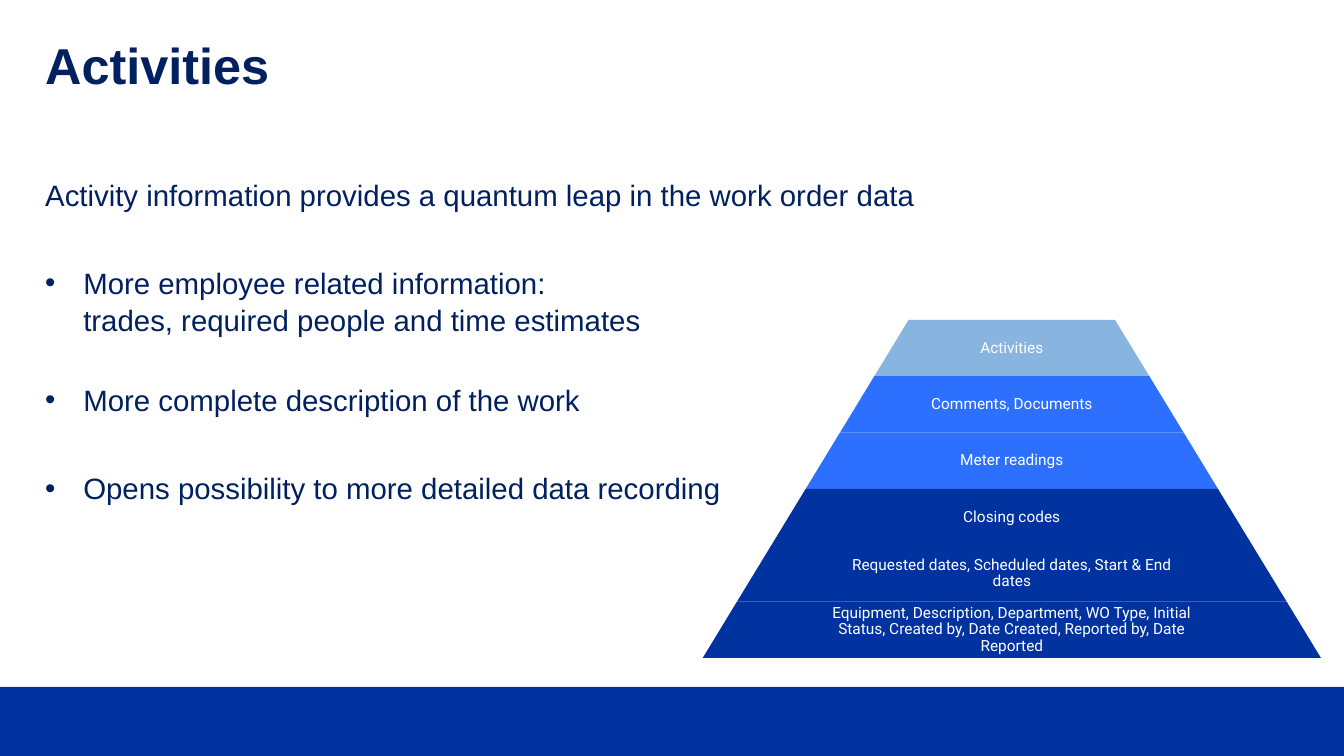
from dataclasses import dataclass

from lxml.etree import SubElement
from pptx import Presentation
from pptx.dml.color import RGBColor as Rgb
from pptx.enum.shapes import MSO_SHAPE as Kind
from pptx.enum.text import MSO_ANCHOR as Anchor, PP_ALIGN as Align
from pptx.oxml.ns import qn
from pptx.util import Cm, Pt


@dataclass(frozen=True)
class Theme:
    navy: str = "002060"
    blue: str = "0033A0"
    mid: str = "2D70FF"
    pale: str = "88B5E0"
    white: str = "FFFFFF"
    sans: str = "Arial"
    label: str = "Roboto"
    title: float = 36
    body: float = 21
    small: float = 11


@dataclass(frozen=True)
class Box:
    x: float
    y: float
    w: float
    h: float

    def place(self) -> tuple:
        return Cm(self.x), Cm(self.y), Cm(self.w), Cm(self.h)


@dataclass(frozen=True)
class Tier:
    text: str
    fill: str


@dataclass(frozen=True)
class Point:
    lines: tuple
    after: float
    dot: bool = True


LOOK = Theme()
WIDE, HIGH = 33.87, 19.05

POINTS = (
    Point(("Activity information provides a quantum leap in the work order data",), 37, False),
    Point(("More employee related information:",
           "trades, required people and time estimates"), 31),
    Point(("More complete description of the work",), 37),
    Point(("Opens possibility to more detailed data recording",), 6),
)

TIERS = (
    Tier("Activities", LOOK.pale),
    Tier("Comments, Documents", LOOK.mid),
    Tier("Meter readings", LOOK.mid),
    Tier("Closing codes", LOOK.blue),
    Tier("Requested dates, Scheduled dates, Start & End dates", LOOK.blue),
    Tier("Equipment, Description, Department, WO Type, Initial Status, "
         "Created by, Date Created, Reported by, Date Reported", LOOK.blue),
)

# Pyramid measures: centre, top, tier height, top tier width, growth per tier
MID, TOP, STEP, BASE, GROW = 25.5, 8.06, 1.42, 6.93, 1.73
SLOPE = 0.609
SHARE = 0.65


def add_block(slide, kind: Kind, box: Box, fill: str):
    block = slide.shapes.add_shape(kind, *box.place())
    block.shadow.inherit = False
    block.fill.solid()
    block.fill.fore_color.rgb = Rgb.from_string(fill)
    block.line.fill.background()
    return block


def add_frame(slide, box: Box, inset: float = 0):
    frame = slide.shapes.add_textbox(*box.place()).text_frame
    frame.word_wrap = True
    frame.margin_left = frame.margin_right = Cm(inset)
    frame.margin_top = frame.margin_bottom = Cm(inset)
    return frame


def add_run(para, text: str, face: str, size: float, ink: str, bold: bool = False) -> None:
    run = para.add_run()
    run.text = text
    run.font.name = face
    run.font.size = Pt(size)
    run.font.bold = bold
    run.font.color.rgb = Rgb.from_string(ink)


def add_dot(para, dent: float) -> None:
    props = para._p.get_or_add_pPr()
    props.set("marL", str(Cm(dent)))
    props.set("indent", str(-Cm(dent)))
    SubElement(props, qn("a:buFont"), typeface=LOOK.sans)
    SubElement(props, qn("a:buChar"), char="•")


def add_points(slide, box: Box) -> None:
    frame = add_frame(slide, box)
    for num, point in enumerate(POINTS):
        para = frame.add_paragraph() if num else frame.paragraphs[0]
        para.line_spacing = 1.04
        para.space_after = Pt(point.after)
        if point.dot:
            add_dot(para, 0.96)
        for row, line in enumerate(point.lines):
            if row:
                para.add_line_break()
            add_run(para, line, LOOK.sans, LOOK.body, LOOK.navy)


def add_tier(slide, num: int, tier: Tier) -> None:
    wide = BASE + GROW * num
    y = TOP + STEP * num
    block = add_block(slide, Kind.TRAPEZOID, Box(MID - wide / 2, y, wide, STEP), tier.fill)
    block.adjustments[0] = SLOPE
    room = wide * SHARE
    frame = add_frame(slide, Box(MID - room / 2, y, room, STEP), 0.04)
    frame.vertical_anchor = Anchor.MIDDLE
    para = frame.paragraphs[0]
    para.alignment = Align.CENTER
    para.line_spacing = 0.9
    add_run(para, tier.text, LOOK.label, LOOK.small, LOOK.white)


def main() -> None:
    deck = Presentation()
    deck.slide_width, deck.slide_height = Cm(WIDE), Cm(HIGH)
    slide = deck.slides.add_slide(deck.slide_layouts[6])

    # Footer band
    add_block(slide, Kind.RECTANGLE, Box(0, 17.31, WIDE, 1.74), LOOK.blue)

    # Title
    para = add_frame(slide, Box(1.14, 1.04, 31.6, 2.08)).paragraphs[0]
    para.line_spacing = 0.9
    add_run(para, "Activities", LOOK.sans, LOOK.title, LOOK.navy, True)

    # Bullet text
    add_points(slide, Box(1.14, 4.42, 31.6, 12.8))

    # Pyramid of record layers
    for num, tier in enumerate(TIERS):
        add_tier(slide, num, tier)

    deck.save("out.pptx")


if __name__ == "__main__":
    main()
